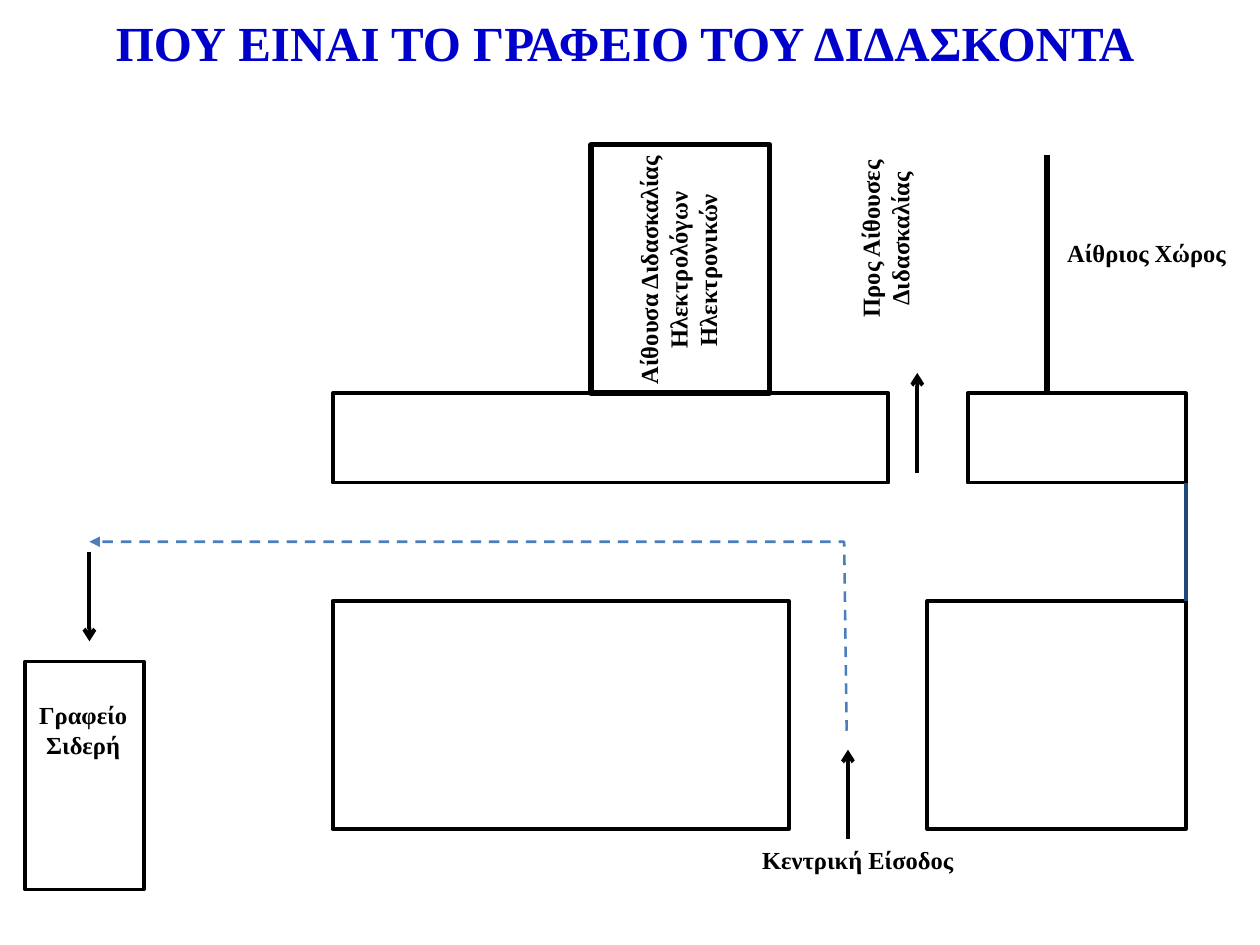
"""Build the slide that maps the way to the teacher's office."""
import lxml.etree
import pptx
import pptx.dml.color
import pptx.enum.dml
import pptx.enum.shapes
import pptx.enum.text
import pptx.oxml.ns
import pptx.util

PX = 9144
BLACK = pptx.dml.color.RGBColor(0x00, 0x00, 0x00)
TITLE_BLUE = pptx.dml.color.RGBColor(0x00, 0x00, 0xCC)
WALL_BLUE = pptx.dml.color.RGBColor(0x1F, 0x49, 0x7D)
ROUTE_BLUE = pptx.dml.color.RGBColor(0x4B, 0x7E, 0xBC)
LEFT = pptx.enum.text.PP_ALIGN.LEFT
CENTER = pptx.enum.text.PP_ALIGN.CENTER


def style_line(shape, color, width, head=None):
    shape.line.color.rgb = color
    shape.line.width = pptx.util.Pt(width)
    if head:
        outline = shape.line._get_or_add_ln()
        lxml.etree.SubElement(outline, pptx.oxml.ns.qn("a:tailEnd"), type=head)


deck = pptx.Presentation()
deck.slide_width, deck.slide_height = 1000 * PX, 750 * PX
page = deck.slides.add_slide(deck.slide_layouts[6])

rooms = [
    (264, 477, 362, 181, 2.25),
    (736, 477, 205, 181, 2.25),
    (768, 312, 173, 71, 2.25),
    (264, 312, 441, 71, 2.25),
    (469, 115, 142, 197, 3),
    (20, 525, 94, 181, 2.25),
]
for left, top, width, height, weight in rooms:
    room = page.shapes.add_shape(
        pptx.enum.shapes.MSO_SHAPE.RECTANGLE, left * PX, top * PX, width * PX, height * PX
    )
    room.shadow.inherit = False
    room.fill.background()
    style_line(room, BLACK, weight)

walls_and_arrows = [
    (673, 666, 673, 595, BLACK, 2.25, "arrow"),
    (941, 383, 941, 477, WALL_BLUE, 2.25, None),
    (728, 375, 728, 296, BLACK, 2.25, "arrow"),
    (71, 438, 71, 509, BLACK, 2.25, "arrow"),
    (831, 312, 831, 123, BLACK, 3, None),
]
for x1, y1, x2, y2, color, weight, head in walls_and_arrows:
    connector = page.shapes.add_connector(
        pptx.enum.shapes.MSO_CONNECTOR.STRAIGHT, x1 * PX, y1 * PX, x2 * PX, y2 * PX
    )
    style_line(connector, color, weight, head)
    lxml.etree.SubElement(connector._element.spPr, pptx.oxml.ns.qn("a:effectLst"))

builder = page.shapes.build_freeform(672, 580, scale=PX)
builder.add_line_segments([(670, 430), (71, 430)], close=False)
route = builder.convert_to_shape()
route.shadow.inherit = False
route.fill.background()
route.line.dash_style = pptx.enum.dml.MSO_LINE.DASH
style_line(route, ROUTE_BLUE, 1.5, "triangle")

labels = [
    ("ΠΟΥ ΕΙΝΑΙ ΤΟ ΓΡΑΦΕΙΟ ΤΟΥ ΔΙΔΑΣΚΟΝΤΑ", 67, 5, 858, 57, 0, 28, TITLE_BLUE, CENTER, True),
    ("Κεντρική Είσοδος", 595, 666, 173, 34, 0, 14, BLACK, LEFT, True),
    ("Γραφείο Σιδερή", 19, 551, 94, 57, 0, 14, BLACK, CENTER, True),
    ("Αίθουσα Διδασκαλίας\nΗλεκτρολόγων\nΗλεκτρονικών",
     437, 174, 203, 81, 270, 14, BLACK, CENTER, False),
    ("Προς Αίθουσες Διδασκαλίας", 596, 161, 213, 57, 270, 14, BLACK, CENTER, True),
    ("Αίθριος Χώρος", 823, 184, 174, 34, 0, 14, BLACK, CENTER, True),
]
for text, left, top, width, height, angle, size, color, align, wrap in labels:
    box = page.shapes.add_textbox(left * PX, top * PX, width * PX, height * PX)
    box.rotation = angle
    frame = box.text_frame
    frame.word_wrap = wrap
    frame.auto_size = pptx.enum.text.MSO_AUTO_SIZE.SHAPE_TO_FIT_TEXT
    frame.text = text
    for para in frame.paragraphs:
        para.alignment = align
        for span in para.runs:
            span.font.name = "Times New Roman"
            span.font.size = pptx.util.Pt(size)
            span.font.bold = True
            span.font.color.rgb = color

deck.save("out.pptx")
